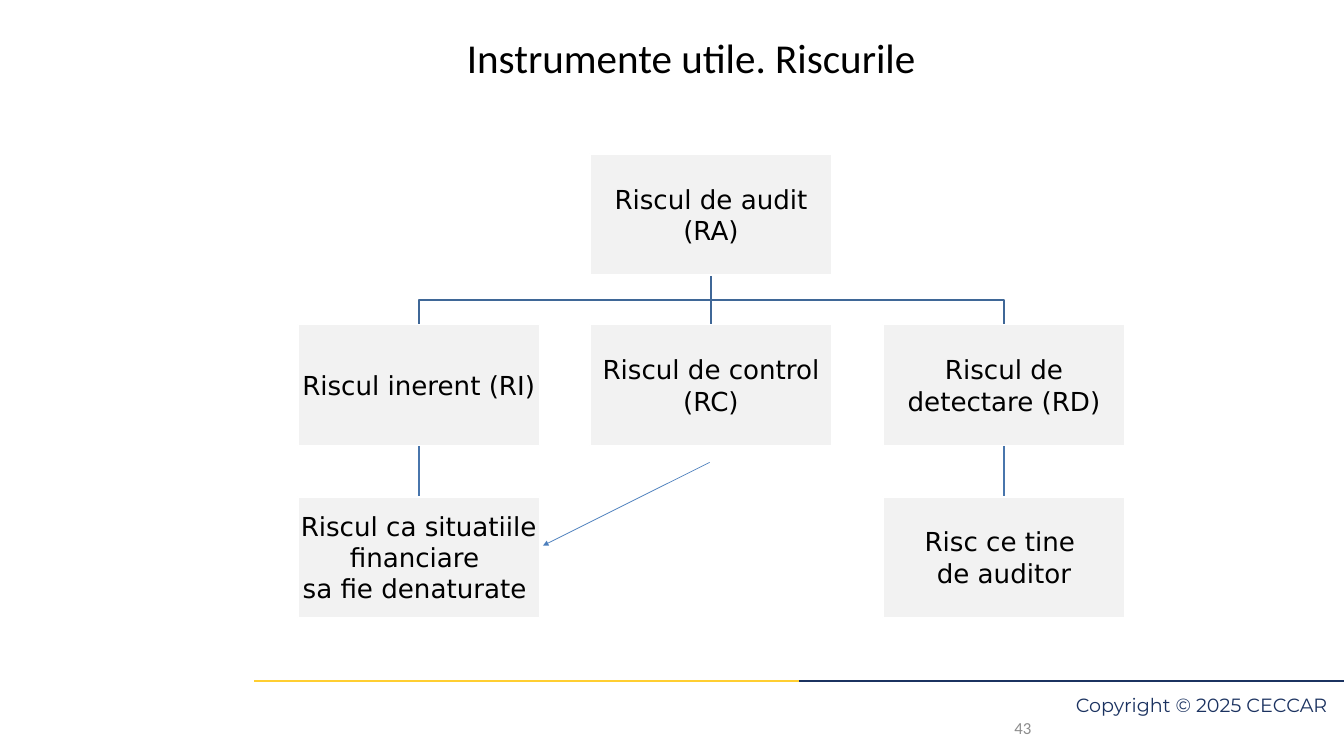
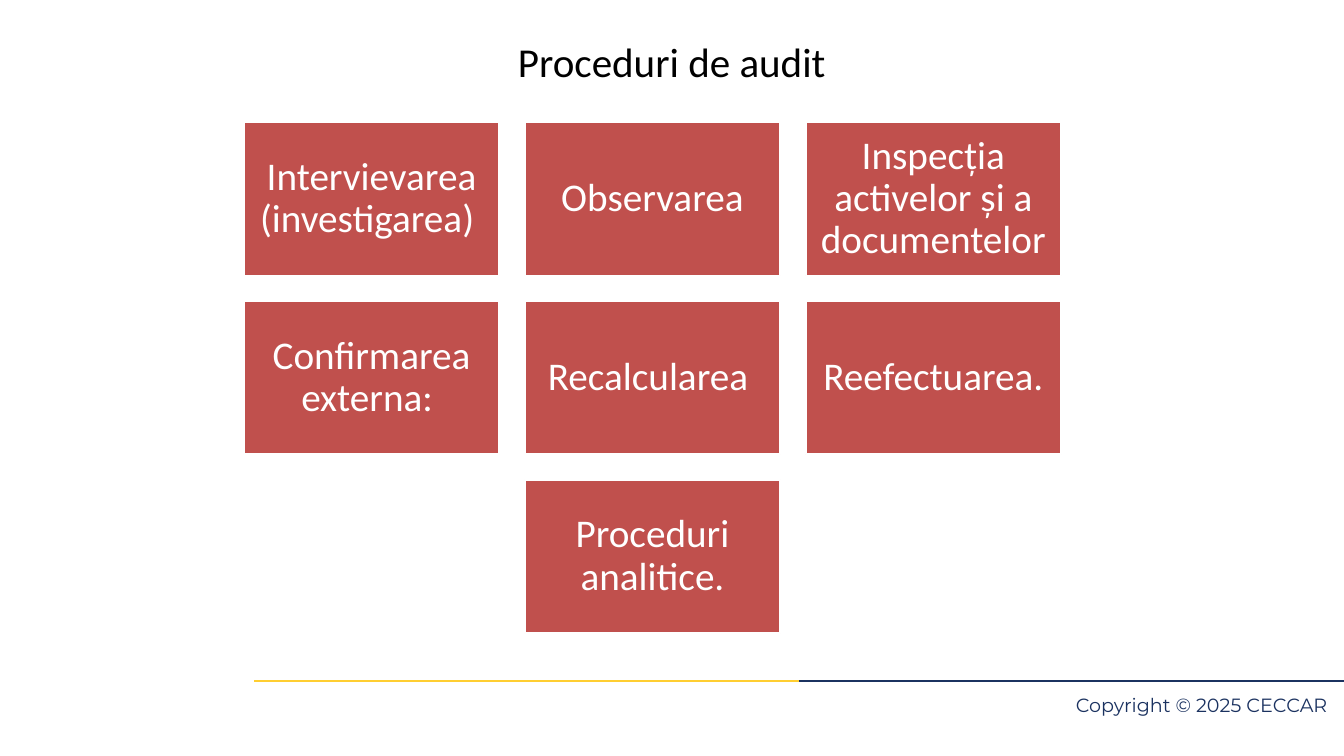
from lxml import etree
from pptx import Presentation
from pptx import util as u
from pptx.dml.color import RGBColor
from pptx.enum import shapes, text
from pptx.oxml.ns import qn

PX = 9144  # 100 px to the inch
COLORS = {
    "navy": "1B3260", "yellow": "FFCE31", "black": "000000", "white": "FFFFFF",
    "number": "8C8C8C", "risk": "F2F2F2", "branch": "3F6797", "leaf": "4875AC",
    "arrow": "4B7EBC", "procedure": "C0504D",
}


def write(slide, box, words, font="Calibri", size=44, color="black", align="CENTER",
          anchor="MIDDLE", inset=(10, 5), spacing=None, fill=None):
    """Write paragraphs in a text box, or in a white-edged rectangle if fill is given."""
    area = [v * PX for v in box]
    if fill:
        holder = slide.shapes.add_shape(shapes.MSO_SHAPE.RECTANGLE, *area)
        holder.shadow.inherit = False
        holder.fill.solid()
        holder.fill.fore_color.rgb = RGBColor.from_string(COLORS[fill])
        holder.line.color.rgb = RGBColor.from_string(COLORS["white"])
        holder.line.width = u.Pt(2)
    else:
        holder = slide.shapes.add_textbox(*area)
    frame = holder.text_frame
    frame.word_wrap = True
    frame.vertical_anchor = getattr(text.MSO_ANCHOR, anchor)
    frame.margin_left = frame.margin_right = inset[0] * PX
    frame.margin_top = frame.margin_bottom = inset[1] * PX
    frame.text = words
    for paragraph in frame.paragraphs:
        paragraph.alignment = getattr(text.PP_ALIGN, align)
        paragraph.line_spacing = spacing
        paragraph.font.name = font
        paragraph.font.size = u.Pt(size)
        paragraph.font.color.rgb = RGBColor.from_string(COLORS[color])
    return holder


def draw_line(slide, start, end, color, width):
    line = slide.shapes.add_connector(
        shapes.MSO_CONNECTOR.STRAIGHT, *[v * PX for v in (*start, *end)])
    line.line.color.rgb = RGBColor.from_string(COLORS[color])
    line.line.width = u.Pt(width)
    etree.SubElement(line._element.spPr, qn("a:effectLst"))
    return line


deck = Presentation()
deck.slide_width, deck.slide_height = 2000 * PX, 1125 * PX
risks, procedures = [deck.slides.add_slide(deck.slide_layouts[6]) for _ in range(2)]

# Shared footer and titles
for slide, title, left, top in (
    (risks, "Instrumente utile. Riscurile", 75, 22),
    (procedures, "Proceduri de audit", 46, 29),
):
    draw_line(slide, (1188, 1014), (2000, 1014), "navy", 2.25)
    write(slide, (1425, 1037, 558, 30), "Copyright © 2025 CECCAR ", font="Montserrat",
          size=20.5, color="navy", align="RIGHT", anchor="TOP", inset=(0, 0),
          spacing=u.Pt(20.5))
    draw_line(slide, (378, 1014), (1189, 1014), "yellow", 2.25)
    write(slide, (left, top, 1908, 125), title)

# Slide 1: page number
write(risks, (1317, 1063, 233, 40), "43", size=18, color="number", align="RIGHT",
      inset=(15, 7))

# Slide 1: elbow branches from the audit risk to the outer risks
CARD_W, CARD_H = 360, 180
COLUMNS = [443, 878, 1314]
ROWS = [229, 483, 739]
root_x, root_y = COLUMNS[1] + CARD_W // 2, ROWS[0] + CARD_H
bend_y = (root_y + ROWS[1]) // 2
for column in (COLUMNS[2], COLUMNS[0]):
    child_x = column + CARD_W // 2
    route = risks.shapes.build_freeform(root_x, root_y, scale=PX)
    route.add_line_segments(
        [(root_x, bend_y), (child_x, bend_y), (child_x, ROWS[1])], close=False)
    branch = route.convert_to_shape()
    branch.shadow.inherit = False
    branch.fill.background()
    branch.line.color.rgb = RGBColor.from_string(COLORS["branch"])
    branch.line.width = u.Pt(2)

# Slide 1: risk cards, keyed by row and column
risk_names = {
    (0, 1): "Riscul de audit (RA)",
    (1, 0): "Riscul inerent (RI)",
    (2, 0): "Riscul ca situatiile \nfinanciare \nsa fie denaturate ",
    (1, 1): "Riscul de control (RC)",
    (1, 2): "Riscul de detectare (RD)",
    (2, 2): "Risc ce tine \nde auditor",
}
cards = {
    (row, col): write(risks, (COLUMNS[col], ROWS[row], CARD_W, CARD_H), name,
                      font="DejaVu Sans", size=28, inset=(2, 2), fill="risk")
    for (row, col), name in risk_names.items()
}

# Slide 1: straight links, kept behind the cards' white edges
for upper, lower, color in (
    ((0, 1), (1, 1), "branch"), ((1, 0), (2, 0), "leaf"), ((1, 2), (2, 2), "leaf"),
):
    link = draw_line(risks, (0, 0), (0, 0), color, 2)
    link.begin_connect(cards[upper], 2)
    link.end_connect(cards[lower], 0)
    cards[0, 1]._element.addprevious(link._element)

# Slide 1: arrow from control risk to misstatement
arrow = draw_line(risks, (1056, 688), (808, 812), "arrow", 0.75)
etree.SubElement(arrow.line._get_or_add_ln(), qn("a:tailEnd"), type="triangle")

# Slide 2: three-column grid, last procedure centred
TILE_W, TILE_H, GAP = 380, 228, 38
procedure_names = [
    "Intervievarea (investigarea) ", "Observarea", "Inspecția activelor și a documentelor",
    "Confirmarea externa: ", "Recalcularea ", "Reefectuarea.",
    "Proceduri analitice.",
]
for i, name in enumerate(procedure_names):
    row, col = divmod(i, 3)
    if i == len(procedure_names) - 1:
        col = 1
    tile = (363 + col * (TILE_W + GAP), 182 + row * (TILE_H + GAP), TILE_W, TILE_H)
    write(procedures, tile, name, size=42, color="white", inset=(17, 17), spacing=0.9,
          fill="procedure")

deck.save("out.pptx")
